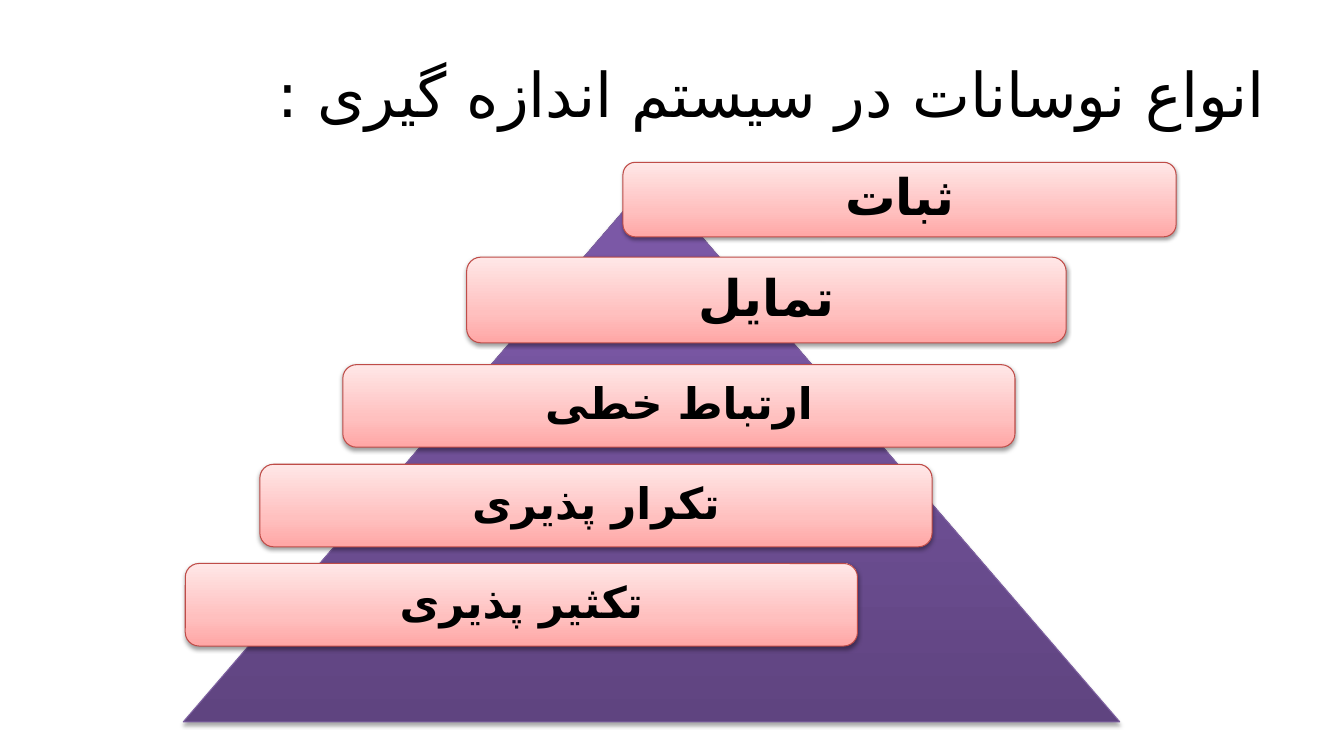
from lxml import etree
from pptx import Presentation
from pptx.dml.color import RGBColor
from pptx.enum.shapes import MSO_SHAPE
from pptx.enum.text import MSO_ANCHOR, PP_ALIGN
from pptx.oxml.ns import qn
from pptx.util import Cm, Pt

TRIANGLE = MSO_SHAPE.ISOSCELES_TRIANGLE
ROUNDED = MSO_SHAPE.ROUNDED_RECTANGLE
MIDDLE = MSO_ANCHOR.MIDDLE
CENTER, RIGHT = PP_ALIGN.CENTER, PP_ALIGN.RIGHT

TITLE = "انواع نوسانات در سیستم اندازه گیری :"
TITLE_AREA = (1.7, 0.76, 30.48, 3.18)
PYRAMID_AREA = (4.62, 4.5, 23.6, 13.69)

# text, (left, top, width, height) in cm, type size, inset in cm
LEVELS = [
    ("ثبات", (15.7, 4.09, 13.94, 1.88), "large", 0.38),
    ("تمایل", (11.76, 6.48, 15.11, 2.16), "large", 0.38),
    ("ارتباط خطی", (8.64, 9.19, 16.94, 2.08), "small", 0.33),
    ("تکرار پذیری", (6.55, 11.7, 16.94, 2.08), "small", 0.33),
    ("تکثیر پذیری", (4.67, 14.2, 16.94, 2.08), "small", 0.33),
]

THEME = {
    "font": "Calibri",
    "persian_font": "DejaVu Sans",
    "text": "000000",
    "sizes": {"title": 44, "large": 36, "small": 31},
    "pyramid": {
        "stops": [(0, "5F4480"), (80, "7B58A6"), (100, "7C57A8")],
        "line": "7D60A0", "shadow_alpha": 35, "shadow_distance": 1.8,
    },
    "level": {
        "stops": [(0, "FFA6A5"), (35, "FFC0BF"), (100, "FFE7E7")],
        "line": "BF4C48", "shadow_alpha": 38, "shadow_distance": 1.6,
    },
}


def add_element(parent, tag, **attributes):
    return etree.SubElement(parent, qn(tag), {k: str(v) for k, v in attributes.items()})


def add_color(parent, color, alpha=100):
    node = add_element(parent, "a:srgbClr", val=color)
    if alpha < 100:
        add_element(node, "a:alpha", val=alpha * 1000)


def add_styled_shape(page, kind, area, style):
    """Add a shape with an upward gradient, a thin outline and a shadow below."""
    shape = page.shapes.add_shape(kind, *map(Cm, area))
    shape.line.color.rgb = RGBColor.from_string(style["line"])
    shape.line.width = Pt(0.75)

    shape.fill.gradient()
    gradient = shape.element.spPr.find(qn("a:gradFill"))
    for child in list(gradient):
        gradient.remove(child)
    stops = add_element(gradient, "a:gsLst")
    for position, color in style["stops"]:
        add_color(add_element(stops, "a:gs", pos=position * 1000), color)
    add_element(gradient, "a:lin", ang=270 * 60000, scaled=0)

    shape.shadow.inherit = False
    effects = shape.element.spPr.find(qn("a:effectLst"))
    shadow = add_element(effects, "a:outerShdw", blurRad=Pt(3.1),
                         dist=Pt(style["shadow_distance"]), dir=90 * 60000, rotWithShape=0)
    add_color(shadow, "000000", style["shadow_alpha"])
    return shape


def write_text(box, text, size, alignment, bold=False):
    """Write one right-to-left line, vertically centred."""
    frame = box.text_frame
    frame.word_wrap = True
    frame.vertical_anchor = MIDDLE
    para = frame.paragraphs[0]
    para.alignment = alignment
    para._p.get_or_add_pPr().set("rtl", "1")
    span = para.add_run()
    span.text = text
    span.font.name = THEME["font"]
    span.font.size = Pt(THEME["sizes"][size])
    span.font.bold = bold
    span.font.color.rgb = RGBColor.from_string(THEME["text"])
    add_element(span.font._element, "a:cs", typeface=THEME["persian_font"])
    return frame


def main():
    deck = Presentation()
    deck.slide_width, deck.slide_height = Cm(33.87), Cm(19.05)
    page = deck.slides.add_slide(deck.slide_layouts[6])

    title = page.shapes.add_textbox(*map(Cm, TITLE_AREA))
    write_text(title, TITLE, "title", RIGHT)

    add_styled_shape(page, TRIANGLE, PYRAMID_AREA, THEME["pyramid"])
    for text, area, size, inset in LEVELS:
        level = add_styled_shape(page, ROUNDED, area, THEME["level"])
        frame = write_text(level, text, size, CENTER, bold=True)
        frame.margin_left = frame.margin_right = Cm(inset)
        frame.margin_top = frame.margin_bottom = Cm(inset)
        frame.paragraphs[0].line_spacing = 0.9

    deck.save("out.pptx")


if __name__ == "__main__":
    main()
